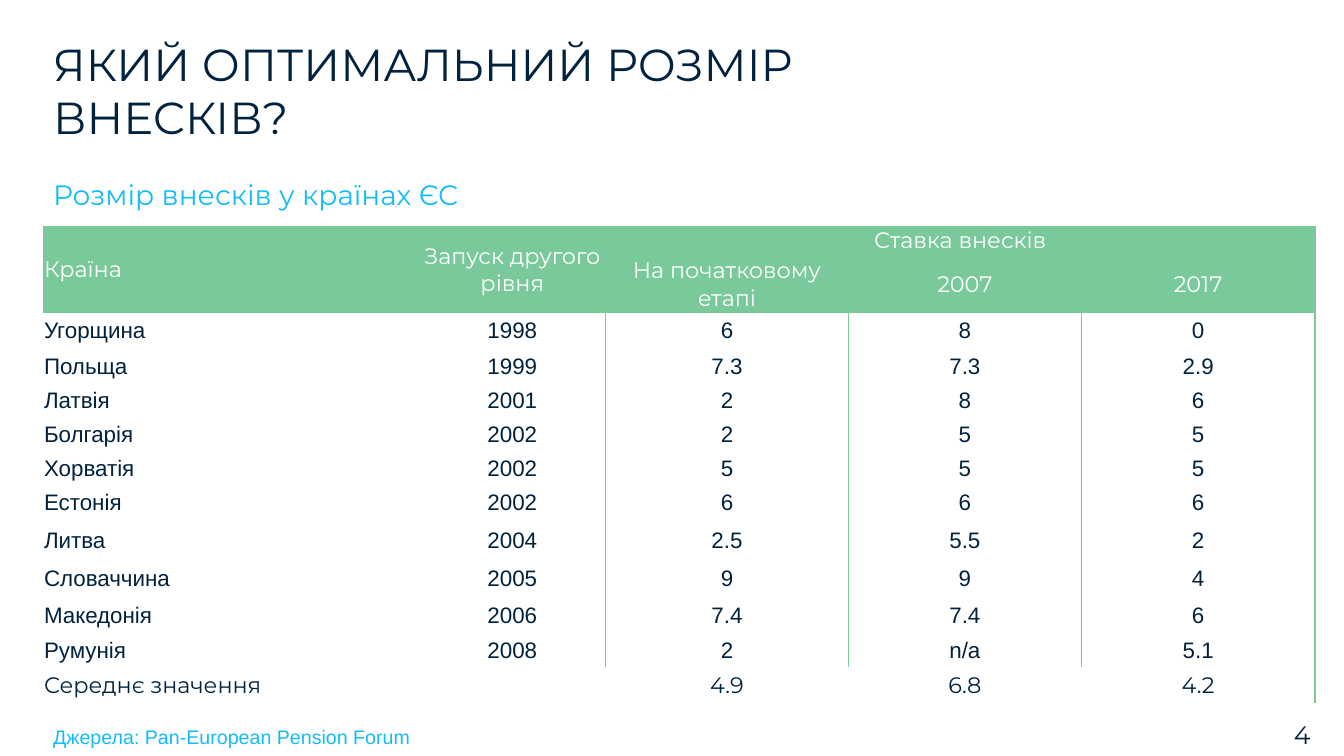
from dataclasses import dataclass

from lxml import etree
from pptx import Presentation
from pptx.dml.color import RGBColor
from pptx.enum.text import MSO_ANCHOR, PP_ALIGN
from pptx.oxml.ns import qn
from pptx.slide import Slide
from pptx.table import Table, _Cell
from pptx.text.text import TextFrame
from pptx.util import Cm, Pt

LEFT, CENTER = PP_ALIGN.LEFT, PP_ALIGN.CENTER
MIDDLE = MSO_ANCHOR.MIDDLE


@dataclass(frozen=True)
class Theme:
    navy: str = "00223E"
    cyan: str = "13BCF5"
    green: str = "7AC99A"
    white: str = "FFFFFF"
    heading_font: str = "Montserrat"
    body_font: str = "Arial"
    title_size: int = 32
    subtitle_size: int = 20
    number_size: int = 18
    table_size: int = 16
    source_size: int = 14
    rule_width: int = 1


THEME = Theme()


@dataclass(frozen=True)
class Label:
    text: str
    left: float
    top: float
    width: float
    height: float
    size: int
    color: str
    font: str = THEME.heading_font


LABELS = [
    Label("ЯКИЙ ОПТИМАЛЬНИЙ РОЗМІР ВНЕСКІВ?", 1.09, 0.79, 21.13, 3,
          THEME.title_size, THEME.navy),
    Label("Розмір внесків у країнах ЄС", 1.09, 4.34, 15.85, 1.12,
          THEME.subtitle_size, THEME.cyan),
    Label("4", 32.36, 18.01, 0.79, 1.02, THEME.number_size, THEME.navy),
    Label("Джерела: Pan-European Pension Forum", 1.09, 18.14, 28.45, 0.86,
          THEME.source_size, THEME.cyan, THEME.body_font),
]

HEADER_ROWS = [
    ["Країна", "Запуск другого рівня", "Ставка внесків", "", ""],
    ["", "", "На початковому етапі", "2007", "2017"],
]
COUNTRY_ROWS = [
    ["Угорщина", "1998", "6", "8", "0"],
    ["Польща", "1999", "7.3", "7.3", "2.9"],
    ["Латвія", "2001", "2", "8", "6"],
    ["Болгарія", "2002", "2", "5", "5"],
    ["Хорватія", "2002", "5", "5", "5"],
    ["Естонія", "2002", "6", "6", "6"],
    ["Литва", "2004", "2.5", "5.5", "2"],
    ["Словаччина", "2005", "9", "9", "4"],
    ["Македонія", "2006", "7.4", "7.4", "6"],
    ["Румунія", "2008", "2", "n/a", "5.1"],
]
AVERAGE_ROW = ["Середнє значення", "", "4.9", "6.8", "4.2"]
ROWS = HEADER_ROWS + COUNTRY_ROWS + [AVERAGE_ROW]
LAST_ROW, LAST_COLUMN = len(ROWS) - 1, len(AVERAGE_ROW) - 1

COLUMN_WIDTHS = [9.47, 4.7, 6.12, 5.87, 5.89]
ROW_HEIGHTS = [0.74, 1.45, 0.91] + [0.86] * 5 + [1.04, 0.91, 0.91, 0.86, 0.91]
MERGES = [(0, 0, 1, 0), (0, 1, 1, 1), (0, 2, 0, 4), (LAST_ROW, 0, LAST_ROW, 1)]


def write_text(frame: TextFrame, text: str, *, size: int, color: str,
               font: str, align: PP_ALIGN = LEFT) -> None:
    """Put one formatted paragraph into a text frame."""
    frame.word_wrap = True
    para = frame.paragraphs[0]
    para.alignment = align
    span = para.add_run()
    span.text = text
    span.font.size = Pt(size)
    span.font.name = font
    span.font.color.rgb = RGBColor.from_string(color)


def add_label(page: Slide, label: Label) -> None:
    """Draw a text box."""
    box = page.shapes.add_textbox(Cm(label.left), Cm(label.top),
                                  Cm(label.width), Cm(label.height))
    write_text(box.text_frame, label.text, size=label.size,
               color=label.color, font=label.font)


def ruled_sides(row: int, column: int) -> set[str]:
    """Return the sides of a table cell that carry a green rule."""
    if row == LAST_ROW:
        return {"R"} if column == LAST_COLUMN else set()
    return {side for side, first in (("L", 2), ("R", 1)) if column >= first}


def set_borders(cell: _Cell, ruled: set[str]) -> None:
    """Rule the chosen sides of a cell and clear the others."""
    properties = cell._tc.get_or_add_tcPr()
    for position, side in enumerate("LRTB"):
        line = etree.Element(qn(f"a:ln{side}"), w=str(Pt(THEME.rule_width)))
        if side in ruled:
            fill = etree.SubElement(line, qn("a:solidFill"))
            etree.SubElement(fill, qn("a:srgbClr"), val=THEME.green)
        else:
            etree.SubElement(line, qn("a:noFill"))
        properties.insert(position, line)


def fill_cell(table: Table, row: int, column: int) -> None:
    """Format one table cell and write its text."""
    cell = table.cell(row, column)
    is_header = row < len(HEADER_ROWS)
    is_country = not is_header and row != LAST_ROW
    cell.vertical_anchor = MIDDLE
    cell.margin_left = cell.margin_right = cell.margin_top = Cm(0.02)
    cell.margin_bottom = 0
    cell.fill.solid()
    cell.fill.fore_color.rgb = RGBColor.from_string(
        THEME.green if is_header else THEME.white)
    set_borders(cell, ruled_sides(row, column))
    if ROWS[row][column]:
        write_text(cell.text_frame, ROWS[row][column], size=THEME.table_size,
                   color=THEME.white if is_header else THEME.navy,
                   font=THEME.body_font if is_country else THEME.heading_font,
                   align=CENTER if column else LEFT)


def add_rates_table(page: Slide) -> None:
    """Draw the table of contribution rates."""
    table = page.shapes.add_table(
        len(ROWS), len(COLUMN_WIDTHS), Cm(1.09), Cm(5.69),
        Cm(sum(COLUMN_WIDTHS)), Cm(sum(ROW_HEIGHTS))).table
    table.first_row = table.horz_banding = False
    for column, width in zip(table.columns, COLUMN_WIDTHS):
        column.width = Cm(width)
    for row, height in zip(table.rows, ROW_HEIGHTS):
        row.height = Cm(height)
    for top, left, bottom, right in MERGES:
        table.cell(top, left).merge(table.cell(bottom, right))
    for row, texts in enumerate(ROWS):
        for column in range(len(texts)):
            fill_cell(table, row, column)


def main() -> None:
    """Build the slide and save the deck."""
    deck = Presentation()
    deck.slide_width, deck.slide_height = Cm(33.87), Cm(19.05)
    page = deck.slides.add_slide(deck.slide_layouts[6])
    for label in LABELS:
        add_label(page, label)
    add_rates_table(page)
    deck.save("out.pptx")


if __name__ == "__main__":
    main()
